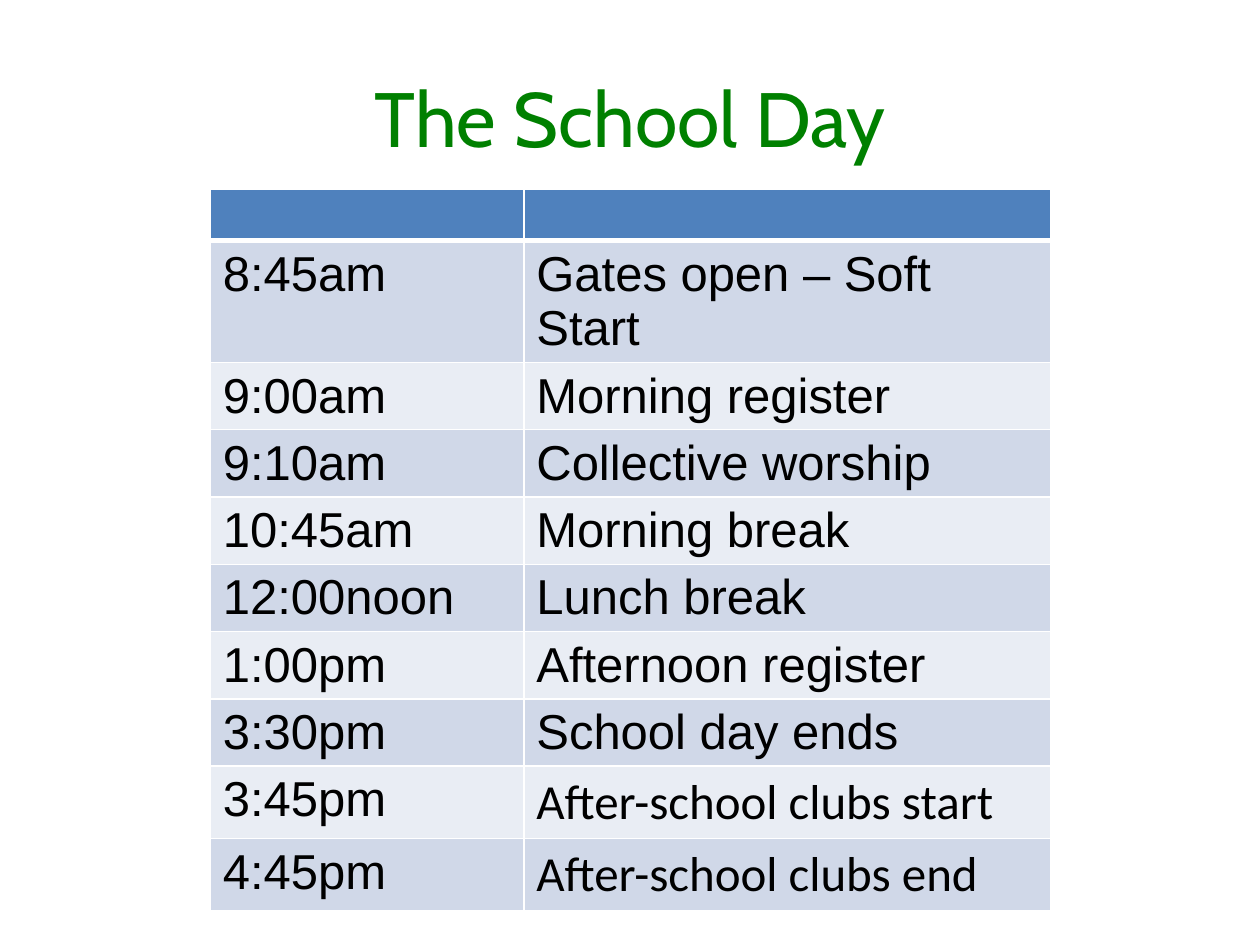
from lxml import etree
from pptx import Presentation
from pptx import util as u
from pptx.dml.color import RGBColor
from pptx.enum import text
from pptx.oxml import ns

GREEN = RGBColor(0x00, 0x80, 0x00)
BLACK = RGBColor(0x00, 0x00, 0x00)
WHITE = RGBColor(0xFF, 0xFF, 0xFF)
HEADER_BLUE = RGBColor(0x4F, 0x81, 0xBD)
BANDS = (RGBColor(0xD0, 0xD8, 0xE8), RGBColor(0xE9, 0xED, 0xF4))

SCHEDULE = [
    ("8:45am", "Gates open – Soft Start"),
    ("9:00am", "Morning register"),
    ("9:10am", "Collective worship"),
    ("10:45am", "Morning break"),
    ("12:00noon", "Lunch break"),
    ("1:00pm", "Afternoon register"),
    ("3:30pm", "School day ends"),
    ("3:45pm", "After-school clubs start"),
    ("4:45pm", "After-school clubs end"),
]
COLUMN_WIDTHS = (u.Cm(6.32), u.Cm(10.62))
ROW_HEIGHT = u.Cm(1)


def style_paragraph(paragraph, font_name, size, color):
    paragraph.font.name = font_name
    paragraph.font.size = u.Pt(size)
    paragraph.font.color.rgb = color


def add_title(page, wording):
    title = page.shapes.title
    title.left, title.top = u.Cm(1.27), u.Cm(0.76)
    title.width, title.height = u.Cm(22.86), u.Cm(3.18)
    title.text_frame.vertical_anchor = text.MSO_ANCHOR.MIDDLE
    paragraph = title.text_frame.paragraphs[0]
    paragraph.text = wording
    paragraph.alignment = text.PP_ALIGN.CENTER
    style_paragraph(paragraph, "Cabin", 44, GREEN)


def set_borders(cell, widths):
    properties = cell._tc.get_or_add_tcPr()
    for side, width in widths.items():
        line = etree.SubElement(properties, ns.qn(f"a:ln{side}"), w=str(u.Pt(width)))
        fill = etree.SubElement(line, ns.qn("a:solidFill"))
        etree.SubElement(fill, ns.qn("a:srgbClr"), val=str(WHITE))


def format_cell(cell, color, top=1, bottom=1):
    set_borders(cell, {"L": 1, "R": 1, "T": top, "B": bottom})
    cell.fill.solid()
    cell.fill.fore_color.rgb = color


def fill_cell(cell, wording):
    paragraph = cell.text_frame.paragraphs[0]
    paragraph.text = wording
    font_name = "Calibri" if wording.startswith("After-school") else "Arial"
    style_paragraph(paragraph, font_name, 28, BLACK)


def add_schedule(page):
    row_count = len(SCHEDULE) + 1
    table = page.shapes.add_table(
        row_count, len(COLUMN_WIDTHS), u.Cm(4.24), u.Cm(3.82),
        sum(COLUMN_WIDTHS), ROW_HEIGHT * row_count,
    ).table
    for column, width in zip(table.columns, COLUMN_WIDTHS):
        column.width = width
    for cell in table.rows[0].cells:
        format_cell(cell, HEADER_BLUE, bottom=3)
    for number, entry in enumerate(SCHEDULE, start=1):
        for cell, wording in zip(table.rows[number].cells, entry):
            format_cell(cell, BANDS[(number - 1) % 2], top=3 if number == 1 else 1)
            fill_cell(cell, wording)


def main():
    deck = Presentation()
    deck.slide_width, deck.slide_height = u.Cm(25.4), u.Cm(19.05)
    page = deck.slides.add_slide(deck.slide_layouts[5])
    add_title(page, "The School Day")
    add_schedule(page)
    deck.save("out.pptx")


if __name__ == "__main__":
    main()
